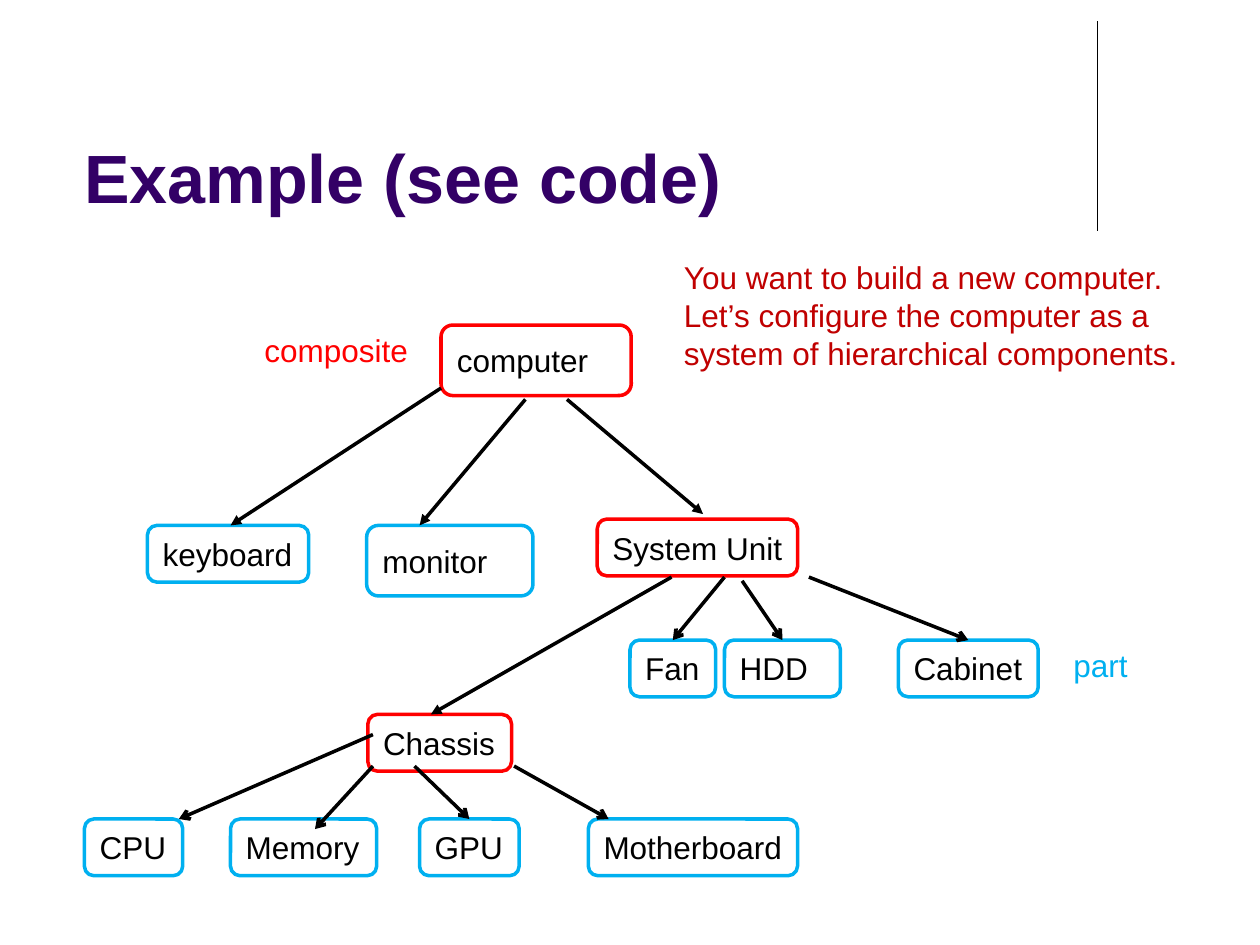
from lxml.etree import SubElement
from pptx import Presentation
from pptx.dml.color import RGBColor
from pptx.enum.shapes import MSO_CONNECTOR as Conn, MSO_SHAPE as Shape
from pptx.enum.text import MSO_ANCHOR as Anchor, PP_ALIGN as Align
from pptx.oxml.ns import qn
from pptx.util import Inches, Pt

COLORS = {
    "black": "000000",
    "title": "330066",
    "group": "FF0000",
    "part": "00B0F0",
    "note": "C00000",
}
LOW, TALL = 0.45, 0.56
TOP = 0

# name: kind, left, top, width, height
NODES = {
    "computer": ("group", 3.5, 2.58, 1.51, TALL),
    "keyboard": ("part", 1.17, 4.17, 1.28, LOW),
    "monitor": ("part", 2.91, 4.17, 1.32, TALL),
    "System Unit": ("group", 4.74, 4.12, 1.59, LOW),
    "Fan": ("part", 5, 5.08, 0.68, LOW),
    "HDD": ("part", 5.75, 5.08, 0.92, LOW),
    "Cabinet": ("part", 7.13, 5.08, 1.11, LOW),
    "Chassis": ("group", 2.92, 5.67, 1.14, LOW),
    "CPU": ("part", 0.67, 6.5, 0.78, LOW),
    "Memory": ("part", 1.83, 6.5, 1.16, LOW),
    "GPU": ("part", 3.33, 6.5, 0.79, LOW),
    "Motherboard": ("part", 4.67, 6.5, 1.66, LOW),
}

# start, end (a point, or the node whose top middle is met), head
LINKS = [
    ((3.5, 3.08), (1.83, 4.17), "triangle"),
    ((4.17, 3.17), (3.33, 4.17), "triangle"),
    ((4.5, 3.17), (5.58, 4.08), "triangle"),
    ((5.33, 4.58), (3.42, 5.67), "triangle"),
    ((5.75, 4.58), "Fan", "arrow"),
    ((5.89, 4.61), "HDD", "arrow"),
    ((6.42, 4.58), "Cabinet", "arrow"),
    ((2.96, 5.83), (1.42, 6.5), "arrow"),
    ((2.96, 6.08), (2.5, 6.58), "arrow"),
    ((3.29, 6.08), "GPU", "arrow"),
    ((4.08, 6.08), (4.83, 6.5), "arrow"),
]

# text, box, color, wrap
LABELS = [
    ("You want to build a new computer. Let’s configure the computer "
     "as a system of hierarchical components.", (5.33, 2, 4.25, 1.01), "note", True),
    ("composite", (2, 2.58, 1.35, 0.4), "group", False),
    ("part", (8.42, 5.08, 0.64, 0.4), "part", False),
]


def rgb(name):
    return RGBColor.from_string(COLORS[name])


def write(frame, text, color="black", size=18, bold=False):
    para = frame.paragraphs[0]
    para.alignment = Align.LEFT
    run = para.add_run()
    run.text = text
    style = {"name": "Arial", "size": Pt(size), "bold": bold}
    for key, value in style.items():
        setattr(run.font, key, value)
    run.font.color.rgb = rgb(color)


def add_label(slide, text, box, color, wrap=True, anchor=Anchor.TOP, **font):
    frame = slide.shapes.add_textbox(*map(Inches, box)).text_frame
    frame.word_wrap = wrap
    frame.vertical_anchor = anchor
    write(frame, text, color, **font)


def add_node(slide, text, kind, *box):
    node = slide.shapes.add_shape(Shape.ROUNDED_RECTANGLE, *map(Inches, box))
    node.shadow.inherit = False
    node.fill.background()
    node.line.color.rgb = rgb(kind)
    node.line.width = Pt(2)
    frame = node.text_frame
    layout = {"word_wrap": True, "vertical_anchor": Anchor.MIDDLE, "margin_right": 0}
    for key, value in layout.items():
        setattr(frame, key, value)
    write(frame, text)
    return node


def add_line(slide, start, end, width=2, head=None):
    line = slide.shapes.add_connector(Conn.STRAIGHT, *map(Inches, (*start, *end)))
    line.line.color.rgb = rgb("black")
    line.line.width = Pt(width)
    if head:
        SubElement(line.line._get_or_add_ln(), qn("a:tailEnd"), type=head)
    SubElement(line._element.spPr, qn("a:effectLst"))
    return line


def add_link(slide, nodes, start, end, head):
    if end in nodes:
        add_line(slide, start, start, head=head).end_connect(nodes[end], TOP)
    else:
        add_line(slide, start, end, head=head)


def main():
    deck = Presentation()
    deck.slide_width, deck.slide_height = Inches(10), Inches(7.5)
    slide = deck.slides.add_slide(deck.slide_layouts[6])

    add_line(slide, (8.71, 0.17), (8.71, 1.83), width=0.75)
    add_label(slide, "Example (see code)", (0.57, 0.24, 9.4, 1.53), "title",
              anchor=Anchor.BOTTOM, size=39, bold=True)
    nodes = {name: add_node(slide, name, *spec) for name, spec in NODES.items()}
    for link in LINKS:
        add_link(slide, nodes, *link)
    for label in LABELS:
        add_label(slide, *label)

    deck.save("out.pptx")


if __name__ == "__main__":
    main()
